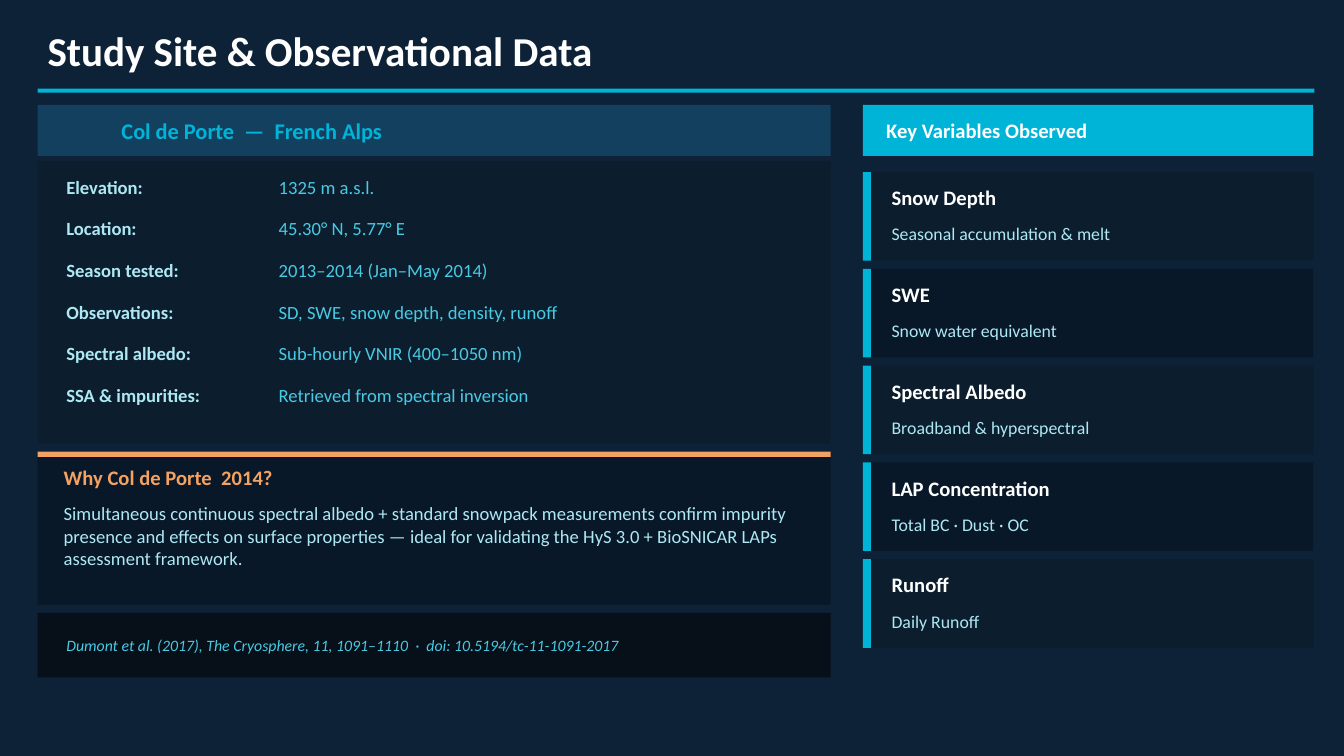
import pptx
import pptx.util
import pptx.dml.color
import pptx.enum.shapes
import pptx.enum.text
from dataclasses import dataclass

TITLE = "Study Site & Observational Data"
SITE_HEADING = "Col de Porte  —  French Alps"
SITE_FACTS = [
    ("Elevation:", "1325 m a.s.l."),
    ("Location:", "45.30° N, 5.77° E"),
    ("Season tested:", "2013–2014 (Jan–May 2014)"),
    ("Observations:", "SD, SWE, snow depth, density, runoff"),
    ("Spectral albedo:", "Sub-hourly VNIR (400–1050 nm)"),
    ("SSA & impurities:", "Retrieved from spectral inversion"),
]
REASON_HEADING = "Why Col de Porte  2014?"
REASON = (
    "Simultaneous continuous spectral albedo + standard snowpack measurements "
    "confirm impurity presence and effects on surface properties — ideal for "
    "validating the HyS 3.0 + BioSNICAR LAPs assessment framework."
)
CITATION = "Dumont et al. (2017), The Cryosphere, 11, 1091–1110  ·  doi: 10.5194/tc-11-1091-2017"
VARIABLES_HEADING = "Key Variables Observed"
VARIABLES = [
    ("Snow Depth", "Seasonal accumulation & melt"),
    ("SWE", "Snow water equivalent"),
    ("Spectral Albedo", "Broadband & hyperspectral"),
    ("LAP Concentration", "Total BC · Dust · OC"),
    ("Runoff", "Daily Runoff"),
]


@dataclass(frozen=True)
class Theme:
    font: str = "Calibri"
    background: str = "0D2137"
    banner: str = "144060"
    panel: str = "0C1E2E"
    panel_dark: str = "091828"
    footer: str = "070F18"
    accent: str = "00B4D8"
    warm: str = "F4A261"
    white: str = "FFFFFF"
    pale: str = "ADE8F4"
    aqua: str = "48CAE4"
    title_size: float = 29.3
    site_size: float = 16
    heading_size: float = 14.7
    body_size: float = 13.3
    detail_size: float = 12.7
    citation_size: float = 11.3


THEME = Theme()
LEFT, LEFT_WIDTH, FULL_WIDTH = 26.88, 566.4, 912
RIGHT, RIGHT_WIDTH = 616.32, 321.6
HEADER_TOP, HEADER_HEIGHT = 74.88, 36.48
FACT_TOP, FACT_STEP, LINE_HEIGHT = 120.96, 29.76, 24.96
LABEL_LEFT, VALUE_LEFT = 40.32, 192
REASON_TOP, REASON_LEFT, TEXT_WIDTH = 322.56, 38.4, 547.2
CITATION_TOP, CITATION_HEIGHT = 437.76, 46.08
CARD_TOP, CARD_STEP, CARD_HEIGHT = 122.88, 69.12, 63.36
CARD_TEXT_LEFT, CARD_TEXT_WIDTH = 629.76, 300.48


def color(value):
    return pptx.dml.color.RGBColor.from_string(value)


def add_block(slide, left, top, width, height, fill):
    shape = slide.shapes.add_shape(
        pptx.enum.shapes.MSO_SHAPE.RECTANGLE,
        *map(pptx.util.Pt, (left, top, width, height)),
    )
    shape.shadow.inherit = False
    shape.fill.solid()
    shape.fill.fore_color.rgb = color(fill)
    shape.line.fill.background()


def add_text(slide, text, left, top, width, height, size, ink,
             bold=False, italic=False, anchor="MIDDLE"):
    box = slide.shapes.add_textbox(*map(pptx.util.Pt, (left, top, width, height)))
    frame = box.text_frame
    frame.word_wrap = True
    frame.vertical_anchor = pptx.enum.text.MSO_ANCHOR[anchor]
    run = frame.paragraphs[0].add_run()
    run.text = text
    run.font.name = THEME.font
    run.font.size = pptx.util.Pt(size)
    run.font.color.rgb = color(ink)
    run.font.bold = bold
    run.font.italic = italic


def add_title(slide):
    add_text(slide, TITLE, LEFT, 7.68, FULL_WIDTH, 55.68,
             THEME.title_size, THEME.white, bold=True)
    add_block(slide, LEFT, 63.36, FULL_WIDTH, 2.88, THEME.accent)


def add_site(slide):
    add_block(slide, LEFT, HEADER_TOP, LEFT_WIDTH, HEADER_HEIGHT, THEME.banner)
    add_text(slide, SITE_HEADING, 79.68, HEADER_TOP, 504, HEADER_HEIGHT,
             THEME.site_size, THEME.accent, bold=True)
    add_block(slide, LEFT, 115.2, LEFT_WIDTH, 201.6, THEME.panel)
    for index, (label, value) in enumerate(SITE_FACTS):
        top = FACT_TOP + index * FACT_STEP
        add_text(slide, label, LABEL_LEFT, top, 149, LINE_HEIGHT,
                 THEME.body_size, THEME.pale, bold=True)
        add_text(slide, value, VALUE_LEFT, top, 389, LINE_HEIGHT,
                 THEME.body_size, THEME.aqua)


def add_reason(slide):
    add_block(slide, LEFT, REASON_TOP, LEFT_WIDTH, 109.44, THEME.panel_dark)
    add_block(slide, LEFT, REASON_TOP, LEFT_WIDTH, 3.84, THEME.warm)
    add_text(slide, REASON_HEADING, REASON_LEFT, REASON_TOP + 5.76, TEXT_WIDTH,
             LINE_HEIGHT, THEME.heading_size, THEME.warm, bold=True)
    add_text(slide, REASON, REASON_LEFT, REASON_TOP + 32.64, TEXT_WIDTH, 71,
             THEME.body_size, THEME.pale, anchor="TOP")


def add_citation(slide):
    add_block(slide, LEFT, CITATION_TOP, LEFT_WIDTH, CITATION_HEIGHT, THEME.footer)
    add_text(slide, CITATION, LABEL_LEFT, CITATION_TOP + 3.84, TEXT_WIDTH,
             CITATION_HEIGHT - 7.68, THEME.citation_size, THEME.aqua, italic=True)


def add_variables(slide):
    add_block(slide, RIGHT, HEADER_TOP, RIGHT_WIDTH, HEADER_HEIGHT, THEME.accent)
    add_text(slide, VARIABLES_HEADING, 625.92, HEADER_TOP, 307.2, HEADER_HEIGHT,
             THEME.heading_size, THEME.white, bold=True)
    for index, (name, detail) in enumerate(VARIABLES):
        top = CARD_TOP + index * CARD_STEP
        fill = THEME.panel_dark if index % 2 else THEME.panel
        add_block(slide, RIGHT, top, RIGHT_WIDTH, CARD_HEIGHT, fill)
        add_block(slide, RIGHT, top, 5.76, CARD_HEIGHT, THEME.accent)
        add_text(slide, name, CARD_TEXT_LEFT, top + 5.76, CARD_TEXT_WIDTH,
                 LINE_HEIGHT, THEME.heading_size, THEME.white, bold=True)
        add_text(slide, detail, CARD_TEXT_LEFT, top + 32.64, CARD_TEXT_WIDTH,
                 23.04, THEME.detail_size, THEME.pale)


def main():
    presentation = pptx.Presentation()
    presentation.slide_width = pptx.util.Pt(960)
    presentation.slide_height = pptx.util.Pt(540)
    slide = presentation.slides.add_slide(presentation.slide_layouts[6])
    slide.background.fill.solid()
    slide.background.fill.fore_color.rgb = color(THEME.background)
    for add_section in (add_title, add_site, add_reason, add_citation, add_variables):
        add_section(slide)
    presentation.save("out.pptx")


if __name__ == "__main__":
    main()
